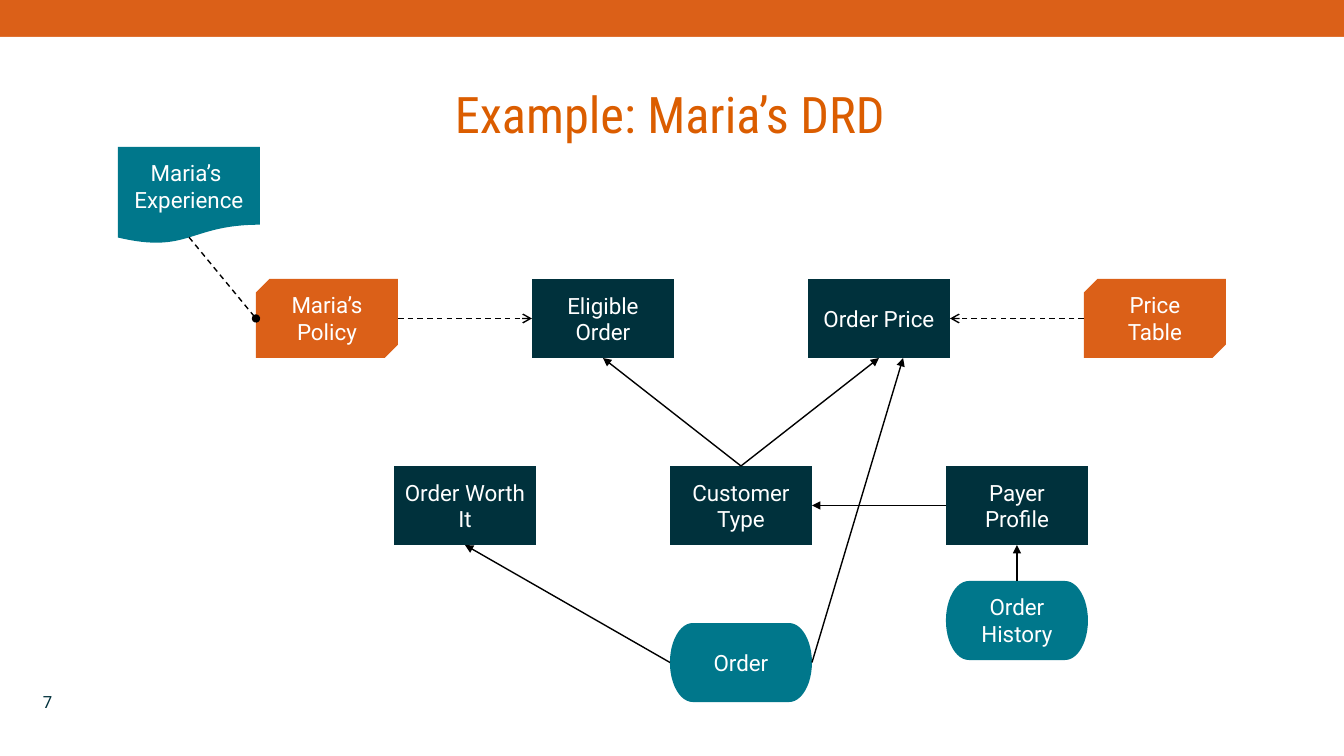
import pptx
import pptx.dml.color
import pptx.enum.dml
import pptx.enum.shapes
import pptx.enum.text
import pptx.oxml
import pptx.oxml.ns
import pptx.util

RGBColor = pptx.dml.color.RGBColor
Shape = pptx.enum.shapes.MSO_SHAPE
Align = pptx.enum.text.PP_ALIGN
Anchor = pptx.enum.text.MSO_ANCHOR

ORANGE = RGBColor(0xDB, 0x60, 0x18)
TITLE_ORANGE = RGBColor(0xDB, 0x5D, 0x00)
NAVY = RGBColor(0x00, 0x31, 0x3C)
TEAL = RGBColor(0x00, 0x77, 0x8B)
WHITE = RGBColor(0xFF, 0xFF, 0xFF)
BLACK = RGBColor(0x00, 0x00, 0x00)

PX_PER_INCH = 100.8
SLIDE_WIDTH, SLIDE_HEIGHT = 1344, 756
NODE_WIDTH, NODE_HEIGHT = 142, 79
FIRST_COLUMN, COLUMN_STEP = 118, 138

# Kind of node: preset shape, fill, height
KINDS = {
    "decision": (Shape.FLOWCHART_PROCESS, NAVY, NODE_HEIGHT),
    "input": (Shape.FLOWCHART_TERMINATOR, TEAL, NODE_HEIGHT),
    "knowledge": (Shape.SNIP_2_DIAG_RECTANGLE, ORANGE, NODE_HEIGHT),
    "source": (Shape.FLOWCHART_DOCUMENT, TEAL, 97),
}

# Name: text, kind, column, top
NODES = {
    "order": ("Order", "input", 4, 623),
    "worth": ("Order Worth It", "decision", 2, 466),
    "customer": ("Customer Type", "decision", 4, 466),
    "payer": ("Payer Profile", "decision", 6, 466),
    "history": ("Order History", "input", 6, 581),
    "experience": ("Maria’s \vExperience", "source", 0, 147),
    "eligible": ("Eligible Order", "decision", 3, 279),
    "price": ("Order Price", "decision", 5, 279),
    "policy": ("Maria’s Policy", "knowledge", 1, 279),
    "table": ("Price Table", "knowledge", 7, 279),
}

# Points on a node, as shares of its width and height
TOP, BOTTOM, LEFT, RIGHT = (0.5, 0), (0.5, 1), (0, 0.5), (1, 0.5)
WAVE, BOTTOM_RIGHT = (0.5, 0.93), (0.67, 1)

# From, to, arrowhead, dashed
LINKS = [
    ("experience", WAVE, "policy", LEFT, "oval", True),
    ("policy", RIGHT, "eligible", LEFT, "arrow", True),
    ("table", LEFT, "price", RIGHT, "arrow", True),
    ("customer", TOP, "eligible", BOTTOM, "triangle", False),
    ("customer", TOP, "price", BOTTOM, "triangle", False),
    ("order", LEFT, "worth", BOTTOM, "triangle", False),
    ("order", RIGHT, "price", BOTTOM_RIGHT, "triangle", False),
    ("payer", LEFT, "customer", RIGHT, "triangle", False),
    ("history", TOP, "payer", BOTTOM, "triangle", False),
]


def px(length):
    return pptx.util.Inches(length / PX_PER_INCH)


class Diagram:
    def __init__(self, slide):
        self.slide = slide
        self.font = "Roboto"

    def set_text(self, shape, text, size, color, align, anchor, font=None):
        frame = shape.text_frame
        frame.word_wrap = True
        frame.vertical_anchor = anchor
        para = frame.paragraphs[0]
        para.text = text
        para.alignment = align
        para.font.name = font or self.font
        para.font.size = pptx.util.Pt(size)
        para.font.color.rgb = color

    def label(self, text, left, top, width, height, *style):
        box = self.slide.shapes.add_textbox(px(left), px(top), px(width), px(height))
        frame = box.text_frame
        frame.margin_top = frame.margin_bottom = px(10)
        self.set_text(box, text, *style)

    def block(self, preset, left, top, width, height, fill):
        shape = self.slide.shapes.add_shape(
            preset, px(left), px(top), px(width), px(height))
        shape.shadow.inherit = False
        shape.fill.solid()
        shape.fill.fore_color.rgb = fill
        shape.line.fill.background()
        return shape

    def node(self, text, kind, column, top):
        preset, fill, height = KINDS[kind]
        left = FIRST_COLUMN + column * COLUMN_STEP
        shape = self.block(preset, left, top, NODE_WIDTH, height, fill)
        if kind == "knowledge":
            shape.adjustments[0], shape.adjustments[1] = 0.17, 0
        self.set_text(shape, text, 16, WHITE, Align.CENTER, Anchor.MIDDLE)
        return shape

    def link(self, start, end, head, dashed):
        """Draw a line between two (node, point) pairs, with a head at the end."""
        ends = [
            int(value)
            for node, (across, down) in (start, end)
            for value in (node.left + across * node.width,
                          node.top + down * node.height)
        ]
        line = self.slide.shapes.add_connector(
            pptx.enum.shapes.MSO_CONNECTOR.STRAIGHT, *ends)
        line.line.color.rgb = BLACK
        line.line.width = pptx.util.Pt(1)
        if dashed:
            line.line.dash_style = pptx.enum.dml.MSO_LINE.DASH
        properties = line._element.spPr
        tail = pptx.oxml.parse_xml(
            f'<a:tailEnd {pptx.oxml.ns.nsdecls("a")} type="{head}"/>')
        properties.find(pptx.oxml.ns.qn("a:ln")).append(tail)
        properties.append(pptx.oxml.parse_xml(
            f'<a:effectLst {pptx.oxml.ns.nsdecls("a")}/>'))


def main():
    deck = pptx.Presentation()
    deck.slide_width, deck.slide_height = px(SLIDE_WIDTH), px(SLIDE_HEIGHT)
    page = deck.slides.add_slide(deck.slide_layouts[6])
    page.background.fill.solid()
    page.background.fill.fore_color.rgb = ORANGE

    diagram = Diagram(page)
    diagram.block(Shape.RECTANGLE, 0, 37, SLIDE_WIDTH, SLIDE_HEIGHT - 37, WHITE)
    diagram.label("7", 33, 688, 88, 28, 12, NAVY, Align.LEFT, Anchor.MIDDLE)
    diagram.label("Example: Maria’s DRD", 140, 73, 1060, 89,
                  36, TITLE_ORANGE, Align.CENTER, Anchor.TOP, "Roboto Condensed")

    nodes = {name: diagram.node(*details) for name, details in NODES.items()}
    for source, leaving, target, entering, head, dashed in LINKS:
        diagram.link((nodes[source], leaving), (nodes[target], entering), head, dashed)

    deck.save("out.pptx")


if __name__ == "__main__":
    main()
